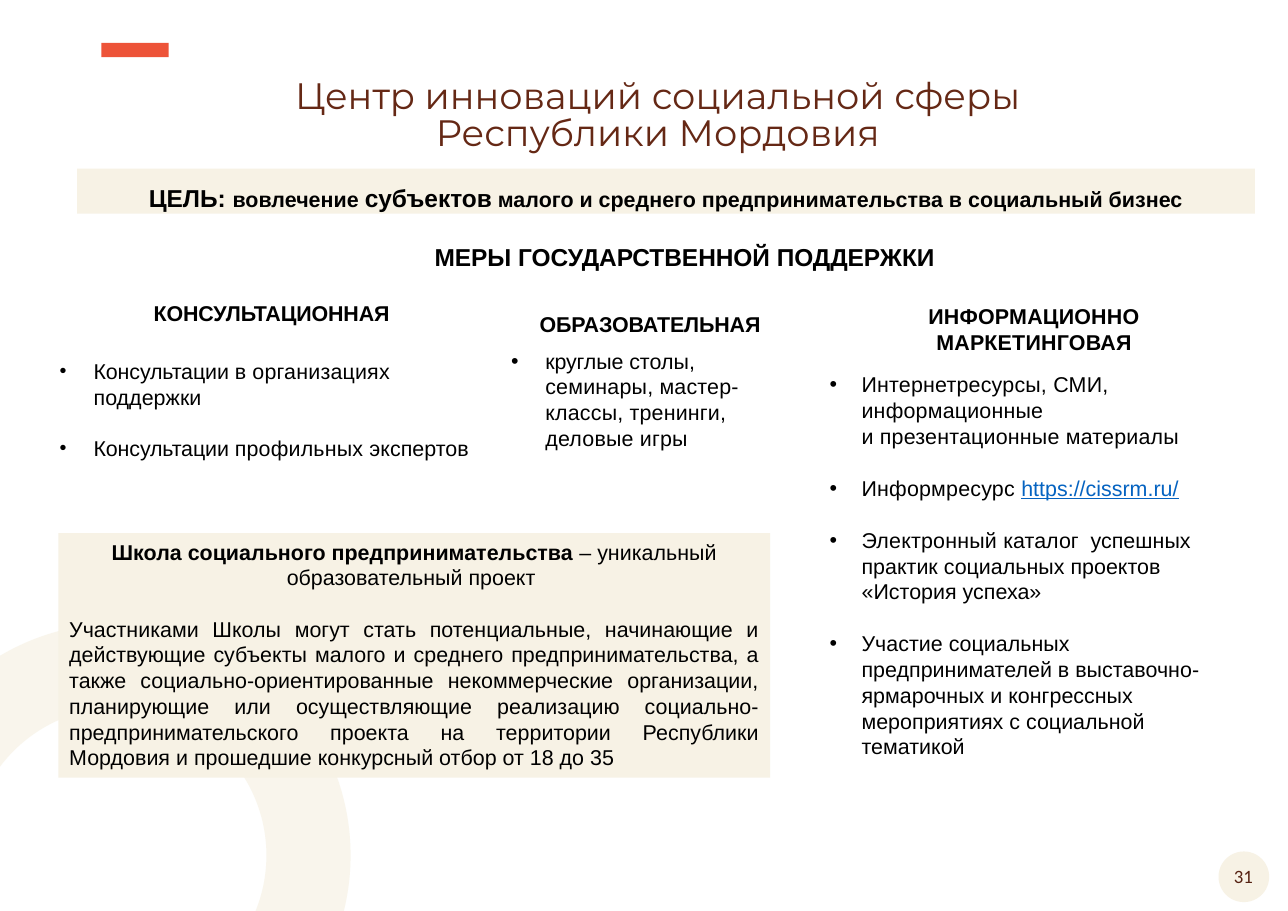
from dataclasses import dataclass

from lxml import etree
from pptx import Presentation
from pptx.dml.color import RGBColor
from pptx.enum.shapes import MSO_SHAPE
from pptx.enum.text import MSO_ANCHOR, MSO_AUTO_SIZE, PP_ALIGN
from pptx.oxml.ns import qn
from pptx.util import Inches, Pt

LEFT, CENTER, JUSTIFY = PP_ALIGN.LEFT, PP_ALIGN.CENTER, PP_ALIGN.JUSTIFY
TOP = MSO_ANCHOR.TOP
FIXED_SIZE = MSO_AUTO_SIZE.NONE
RECTANGLE, OVAL = MSO_SHAPE.RECTANGLE, MSO_SHAPE.OVAL
COMPARISON_LAYOUT = 4


@dataclass(frozen=True)
class Theme:
    cream: str = "F7F2E5"
    accent: str = "ED5338"
    title: str = "652815"
    number: str = "562212"
    text: str = "000000"
    link: str = "0563C1"
    text_font: str = "Arial"
    title_font: str = "Montserrat"
    number_font: str = "Calibri"
    title_size: float = 24
    heading_size: float = 16
    body_size: float = 14
    number_size: float = 12.3


THEME = Theme()


@dataclass(frozen=True)
class Span:
    text: str
    size: float = THEME.body_size
    bold: bool = False
    color: str = THEME.text
    font: str = THEME.text_font
    underline: bool = False
    tracking: int = 0


@dataclass(frozen=True)
class Para:
    spans: tuple
    align: PP_ALIGN = LEFT
    line: float = 1.0
    before: float = 0
    indent: float = 0
    bullet: bool = False
    bullet_percent: int = 100


def place(box, left, top, width, height):
    box.left, box.top = Inches(left), Inches(top)
    box.width, box.height = Inches(width), Inches(height)


def set_bullet(paragraph, para):
    properties = paragraph._p.get_or_add_pPr()
    properties.set("marL", str(Inches(para.indent)))
    properties.set("indent", str(-Inches(para.indent) if para.bullet else 0))
    if not para.bullet:
        etree.SubElement(properties, qn("a:buNone"))
        return
    size = etree.SubElement(properties, qn("a:buSzPct"))
    size.set("val", str(para.bullet_percent * 1000))
    etree.SubElement(properties, qn("a:buFont")).set("typeface", THEME.text_font)
    etree.SubElement(properties, qn("a:buChar")).set("char", "•")


def add_span(paragraph, span):
    run = paragraph.add_run()
    run.text = span.text
    font = run.font
    font.name, font.size = span.font, Pt(span.size)
    font.bold, font.underline = span.bold, span.underline
    font.color.rgb = RGBColor.from_string(span.color)
    if span.tracking:
        run._r.get_or_add_rPr().set("spc", str(span.tracking))


def write(box, paras):
    frame = box.text_frame
    frame.word_wrap = True
    frame.auto_size = FIXED_SIZE
    frame.vertical_anchor = TOP
    for index, para in enumerate(paras):
        paragraph = frame.add_paragraph() if index else frame.paragraphs[0]
        set_bullet(paragraph, para)
        paragraph.alignment = para.align
        paragraph.line_spacing = para.line
        paragraph.space_before = Pt(para.before)
        paragraph.space_after = Pt(0)
        for span in para.spans:
            add_span(paragraph, span)


def add_filled(page, kind, color, *bounds):
    box = page.shapes.add_shape(kind, *map(Inches, bounds))
    box.shadow.inherit = False
    box.fill.solid()
    box.fill.fore_color.rgb = RGBColor.from_string(color)
    box.line.fill.background()
    return box


def add_ring(page, *bounds):
    ring = page.shapes.add_shape(OVAL, *map(Inches, bounds))
    ring.shadow.inherit = False
    ring.fill.background()
    ring.line.width = Pt(55)
    ring.line.color.rgb = RGBColor.from_string(THEME.cream)
    color = ring.line._ln.find(".//" + qn("a:srgbClr"))
    etree.SubElement(color, qn("a:alpha")).set("val", "71000")


def add_text(page, paras, *bounds):
    write(page.shapes.add_textbox(*map(Inches, bounds)), paras)


def fill_placeholder(box, paras, *bounds):
    place(box, *bounds)
    write(box, paras)


def heading(text, line=1.3, tracking=-10):
    return Para((Span(text, bold=True, tracking=tracking),), CENTER, line)


def title_line(text):
    span = Span(text, THEME.title_size, color=THEME.title, font=THEME.title_font)
    return Para((span,), CENTER, 0.85)


def item(*spans, before, indent=0.29, percent=100):
    return Para(spans, before=before, indent=indent, bullet=True, bullet_percent=percent)


def add_columns(page):
    consulting, education, marketing, spare = list(page.placeholders)[1:5]
    fill_placeholder(consulting, [
        heading("КОНСУЛЬТАЦИОННАЯ"),
        item(Span("Консультации ", tracking=-10), Span("в организациях ", tracking=10),
             Span("поддержки"), before=21.5, indent=0.31, percent=92),
        item(Span("Консультации ", tracking=-10), Span("профильных", tracking=10),
             Span(" экспертов"), before=16.8, indent=0.31, percent=92),
    ], 0.44, 2.6, 4.05, 1.84)
    fill_placeholder(education, [
        heading("ОБРАЗОВАТЕЛЬНАЯ"),
        item(Span("круглые ", tracking=-10), Span("столы, "),
             Span("семинары, мастер-классы, тренинги, деловые игры", tracking=10),
             before=7.5, indent=0.31),
    ], 4.54, 2.7, 2.72, 1.64)
    gap = 17.2
    fill_placeholder(marketing, [
        heading("ИНФОРМАЦИОННО МАРКЕТИНГОВАЯ", 1.0, 10),
        item(Span("Интернетресурсы, СМИ, информационные", tracking=10), before=10.9),
        Para((Span("и презентационные материалы", tracking=10),), before=0.3, indent=0.29),
        item(Span("Информресурс ", tracking=10),
             Span("https://cissrm.ru/", color=THEME.link, underline=True), before=gap),
        item(Span("Электронный ", tracking=10),
             Span("каталог  успешных практик социальных проектов  «История успеха»"),
             before=gap),
        item(Span("Участие социальных предпринимателей в выставочно-ярмарочных "
                  "и конгрессных мероприятиях с социальной тематикой"), before=gap),
    ], 7.43, 2.7, 3.91, 4.44)
    spare._element.getparent().remove(spare._element)


def main():
    deck = Presentation()
    deck.slide_width, deck.slide_height = Inches(11.69), Inches(8.27)
    page = deck.slides.add_slide(deck.slide_layouts[COMPARISON_LAYOUT])

    add_filled(page, OVAL, THEME.cream, 11.06, 7.73, 0.46, 0.46)
    number = Span("31", THEME.number_size, color=THEME.number, font=THEME.number_font)
    add_text(page, [Para((number,), CENTER)], 11.03, 7.8, 0.51, 0.31)
    add_filled(page, RECTANGLE, THEME.accent, 0.92, 0.39, 0.61, 0.13)
    add_ring(page, -0.65, 6.04, 3.45, 3.45)

    fill_placeholder(page.shapes.title, [
        title_line("Центр инноваций социальной сферы"),
        title_line("Республики Мордовия"),
    ], 0.7, 0.67, 10.54, 0.79)
    add_columns(page)

    goal = add_filled(page, RECTANGLE, THEME.cream, 0.7, 1.53, 10.69, 0.41)
    write(goal, [Para((
        Span("ЦЕЛЬ: ", THEME.heading_size, True),
        Span("вовлечение ", bold=True),
        Span("субъектов", THEME.heading_size, True),
        Span(" малого и среднего предпринимательства в социальный бизнес", bold=True),
    ), CENTER, 1.3)])
    measures = Span("МЕРЫ ГОСУДАРСТВЕННОЙ ПОДДЕРЖКИ", THEME.heading_size, True)
    add_text(page, [Para((measures,), CENTER, 1.3)], 0.87, 2.07, 10.69, 0.41)

    school = add_filled(page, RECTANGLE, THEME.cream, 0.53, 4.84, 6.46, 2.22)
    write(school, [
        Para((Span("Школа социального предпринимательства ", bold=True),
              Span("– уникальный образовательный проект ")), CENTER),
        Para((Span("Участниками Школы могут стать потенциальные, начинающие и действующие "
                   "субъекты малого и среднего предпринимательства, а также "
                   "социально-ориентированные некоммерческие организации, планирующие или "
                   "осуществляющие реализацию социально-предпринимательского проекта на "
                   "территории Республики Мордовия и прошедшие конкурсный отбор "
                   "от 18 до 35"),), JUSTIFY, before=16.8),
    ])
    deck.save("out.pptx")


if __name__ == "__main__":
    main()
